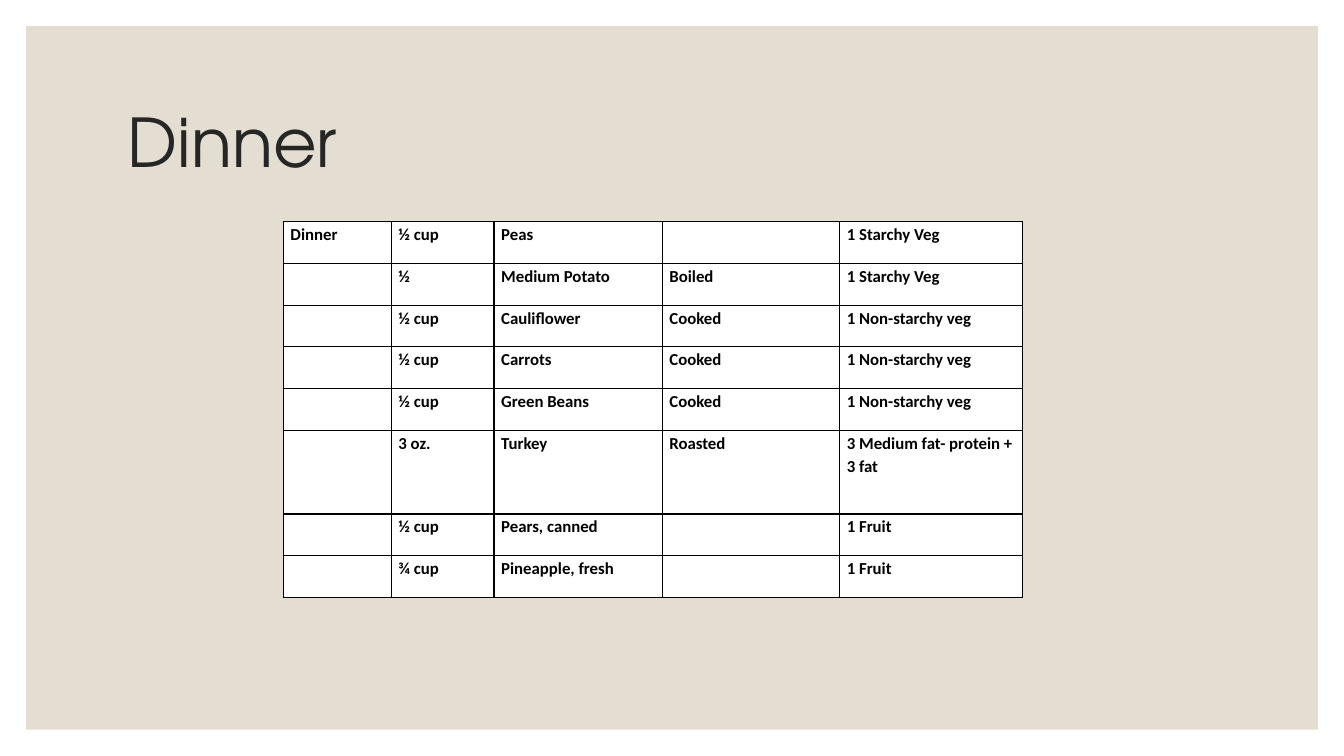
import dataclasses
import typing

import lxml.etree
import pptx
import pptx.dml.color
import pptx.enum.shapes
import pptx.enum.text
import pptx.oxml.ns
import pptx.util

Cm = pptx.util.Cm


@dataclasses.dataclass(frozen=True)
class Theme:
    panel: str = "E3DED1"
    title: str = "262626"
    ink: str = "000000"
    paper: str = "FFFFFF"
    head: str = "TeX Gyre Adventor"
    body: str = "Calibri"
    large: float = 48
    small: float = 12
    border: float = 1


@dataclasses.dataclass(frozen=True)
class Food:
    amount: str
    name: str
    method: str
    group: str
    meal: str = ""
    height: float = 1.05


THEME = Theme()
WIDTHS = (2.72, 2.59, 4.24, 4.47, 4.6)
FOODS = (
    Food("½ cup", "Peas", "", "1 Starchy Veg", meal="Dinner"),
    Food("½", "Medium Potato", "Boiled", "1 Starchy Veg"),
    Food("½ cup", "Cauliflower", "Cooked", "1 Non-starchy veg"),
    Food("½ cup", "Carrots", "Cooked", "1 Non-starchy veg"),
    Food("½ cup", "Green Beans", "Cooked", "1 Non-starchy veg"),
    Food("3 oz.", "Turkey", "Roasted", "3 Medium fat- protein + 3 fat", height=2.11),
    Food("½ cup", "Pears, canned", "", "1 Fruit"),
    Food("¾ cup", "Pineapple, fresh", "", "1 Fruit"),
)


def color(code: str) -> pptx.dml.color.RGBColor:
    return pptx.dml.color.RGBColor.from_string(code)


def write(frame: typing.Any, text: str, *, size: float, font: str, ink: str,
          spacing: float, bold: bool = False) -> None:
    frame.word_wrap = True
    line = frame.paragraphs[0]
    line.line_spacing = spacing
    line.font.size = pptx.util.Pt(size)
    if text:
        run = line.add_run()
        run.text = text
        run.font.name = font
        run.font.size = pptx.util.Pt(size)
        run.font.bold = bold
        run.font.color.rgb = color(ink)


def outline(cell: typing.Any) -> None:
    props = cell._tc.get_or_add_tcPr()
    name = pptx.oxml.ns.qn
    for place, side in enumerate(("a:lnL", "a:lnR", "a:lnT", "a:lnB")):
        edge = lxml.etree.Element(name(side), w=str(pptx.util.Pt(THEME.border)))
        fill = lxml.etree.SubElement(edge, name("a:solidFill"))
        lxml.etree.SubElement(fill, name("a:srgbClr"), val=THEME.ink)
        props.insert(place, edge)


def panel(slide: typing.Any) -> None:
    shape = slide.shapes.add_shape(
        pptx.enum.shapes.MSO_SHAPE.RECTANGLE, Cm(0.66), Cm(0.66), Cm(32.56), Cm(17.73))
    shape.shadow.inherit = False
    shape.fill.solid()
    shape.fill.fore_color.rgb = color(THEME.panel)
    shape.line.fill.background()


def title(slide: typing.Any) -> None:
    frame = slide.shapes.add_textbox(Cm(2.97), Cm(1.78), Cm(27.94), Cm(3.81)).text_frame
    frame.vertical_anchor = pptx.enum.text.MSO_ANCHOR.MIDDLE
    write(frame, "Dinner", size=THEME.large, font=THEME.head, ink=THEME.title, spacing=0.9)


def menu(slide: typing.Any, foods: typing.Sequence[Food]) -> None:
    table = slide.shapes.add_table(
        len(foods), len(WIDTHS), Cm(7.14), Cm(5.59),
        Cm(sum(WIDTHS)), Cm(sum(food.height for food in foods))).table
    table.first_row = table.horz_banding = False
    for column, width in zip(table.columns, WIDTHS):
        column.width = Cm(width)
    for row, food in zip(table.rows, foods):
        row.height = Cm(food.height)
        texts = (food.meal, food.amount, food.name, food.method, food.group)
        for cell, text in zip(row.cells, texts):
            cell.margin_left = cell.margin_right = Cm(0.18)
            cell.margin_top = cell.margin_bottom = 0
            cell.fill.solid()
            cell.fill.fore_color.rgb = color(THEME.paper)
            outline(cell)
            write(cell.text_frame, text, size=THEME.small, font=THEME.body,
                  ink=THEME.ink, spacing=1.15, bold=True)


def main() -> None:
    deck = pptx.Presentation()
    deck.slide_width, deck.slide_height = Cm(33.87), Cm(19.05)
    slide = deck.slides.add_slide(deck.slide_layouts[6])
    slide.background.fill.solid()
    slide.background.fill.fore_color.rgb = color(THEME.paper)
    panel(slide)
    title(slide)
    menu(slide, FOODS)
    deck.save("out.pptx")


if __name__ == "__main__":
    main()
